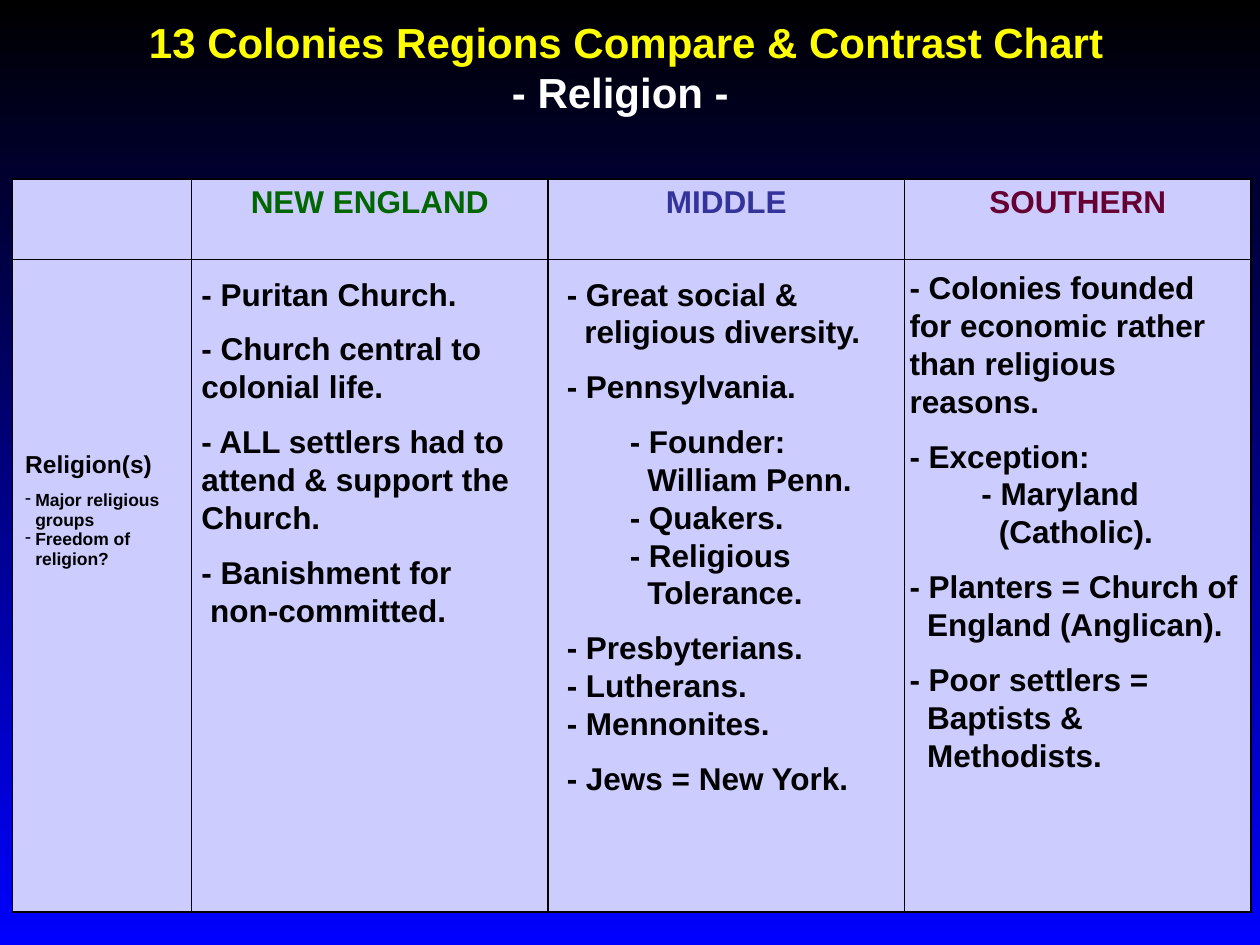
from typing import NamedTuple

from lxml.etree import SubElement
from pptx import Presentation
from pptx.dml.color import RGBColor
from pptx.enum.text import MSO_AUTO_SIZE, PP_ALIGN
from pptx.oxml.ns import qn
from pptx.util import Inches, Pt

BLACK, LILAC = "000000", "CCCCFF"
GAP = 9.8  # points between groups of lines
HANG, SUB = 0.14, 0.5  # inches: continued line, sub-list


class Line(NamedTuple):
    text: str
    indent: float = 0
    before: float = 0
    size: int = 18
    color: str = BLACK
    align: PP_ALIGN = PP_ALIGN.LEFT
    bullet: str = ""


class Column(NamedTuple):
    heading: str
    color: str
    box: tuple[float, float, float, float]
    lines: list[Line]


TITLE = [
    Line("13 Colonies Regions Compare & Contrast Chart", size=24, color="FFFF00",
         align=PP_ALIGN.CENTER),
    Line("- Religion - ", size=24, color="FFFFFF", align=PP_ALIGN.CENTER),
]

TOPIC = [
    Line("Religion(s)", size=14),
    Line("Major religious", 0.08, 7, 10, bullet="-"),
    Line("groups", 0.08, size=10),
    Line("Freedom of", 0.08, size=10, bullet="-"),
    Line("religion?", 0.08, size=10),
]

COLUMNS = [
    Column("NEW ENGLAND", "006600", (1.5, 2.13, 2.83, 3.2), [
        Line("- Puritan Church."),
        Line("- Church central to colonial life.", before=GAP),
        Line("- ALL settlers had to", before=GAP),
        Line("attend & support the"),
        Line("Church."),
        Line("- Banishment for", before=GAP),
        Line("non-committed.", HANG / 2),
    ]),
    Column("MIDDLE", "333399", (4.4, 2.13, 2.77, 4.54), [
        Line("- Great social &"),
        Line("religious diversity.", HANG),
        Line("- Pennsylvania.", before=GAP),
        Line("- Founder:", SUB, GAP),
        Line("William Penn.", SUB + HANG),
        Line("- Quakers.", SUB),
        Line("- Religious", SUB),
        Line("Tolerance.", SUB + HANG),
        Line("- Presbyterians.", before=GAP),
        Line("- Lutherans."),
        Line("- Mennonites."),
        Line("- Jews = New York.", before=GAP),
    ]),
    Column("SOUTHERN", "660033", (7.12, 2.08, 2.88, 4.11), [
        Line("- Colonies founded"),
        Line("for economic rather"),
        Line("than religious"),
        Line("reasons."),
        Line("- Exception:", before=GAP),
        Line("- Maryland", SUB + HANG / 2),
        Line("(Catholic).", SUB + HANG * 1.5),
        Line("- Planters = Church of", before=GAP),
        Line("England (Anglican).", HANG),
        Line("- Poor settlers =", before=GAP),
        Line("Baptists &", HANG),
        Line("Methodists.", HANG),
    ]),
]


def rgb(color: str) -> RGBColor:
    return RGBColor.from_string(color)


def write(tf, lines: list[Line]) -> None:
    for i, line in enumerate(lines):
        p = tf.paragraphs[0] if i == 0 else tf.add_paragraph()
        p.alignment = line.align
        p.space_before = Pt(line.before)
        pPr = p._p.get_or_add_pPr()
        pPr.set("marL", str(Inches(line.indent)))
        pPr.set("indent", str(-Inches(line.indent) if line.bullet else 0))
        if line.bullet:
            SubElement(pPr, qn("a:buChar"), char=line.bullet)
        r = p.add_run()
        r.text = line.text
        for name, value in {"name": "Arial", "size": Pt(line.size), "bold": True}.items():
            setattr(r.font, name, value)
        r.font.color.rgb = rgb(line.color)


def add_text(slide, box: tuple[float, float, float, float], lines: list[Line]) -> None:
    tf = slide.shapes.add_textbox(*map(Inches, box)).text_frame
    for name, value in {"word_wrap": True, "auto_size": MSO_AUTO_SIZE.SHAPE_TO_FIT_TEXT}.items():
        setattr(tf, name, value)
    write(tf, lines)


def style_cell(cell) -> None:
    tcPr = cell._tc.get_or_add_tcPr()
    for side in ("lnL", "lnR", "lnT", "lnB"):
        ln = SubElement(tcPr, qn(f"a:{side}"), w=str(Pt(1)))
        SubElement(SubElement(ln, qn("a:solidFill")), qn("a:srgbClr"), val=BLACK)
    cell.fill.solid()
    cell.fill.fore_color.rgb = rgb(LILAC)


def add_chart_table(slide) -> None:
    widths, heights = (1.42, 2.83, 2.83, 2.75), (0.64, 5.18)
    table = slide.shapes.add_table(
        len(heights), len(widths), Inches(0.1), Inches(1.42),
        Inches(sum(widths)), Inches(sum(heights))).table
    table.first_row = table.horz_banding = False
    for column, width in zip(table.columns, widths):
        column.width = Inches(width)
    for row, height in zip(table.rows, heights):
        row.height = Inches(height)
    for cell in table.iter_cells():
        style_cell(cell)
    for i, column in enumerate(COLUMNS, 1):
        heading = Line(column.heading, color=column.color, align=PP_ALIGN.CENTER)
        write(table.cell(0, i).text_frame, [heading])
    topic = table.cell(1, 0)
    topic.margin_top = Inches(1.52)
    write(topic.text_frame, TOPIC)


def main() -> None:
    prs = Presentation()
    prs.slide_width, prs.slide_height = Inches(10), Inches(7.5)
    s = prs.slides.add_slide(prs.slide_layouts[6])
    fill = s.background.fill
    fill.gradient()
    fill.gradient_angle = 270
    for stop, color in zip(fill.gradient_stops, (BLACK, "0000FF")):
        stop.color.rgb = rgb(color)
    add_text(s, (0.93, 0.08, 8.08, 0.9), TITLE)
    add_chart_table(s)
    for column in reversed(COLUMNS):
        add_text(s, column.box, column.lines)
    prs.save("out.pptx")


if __name__ == "__main__":
    main()
